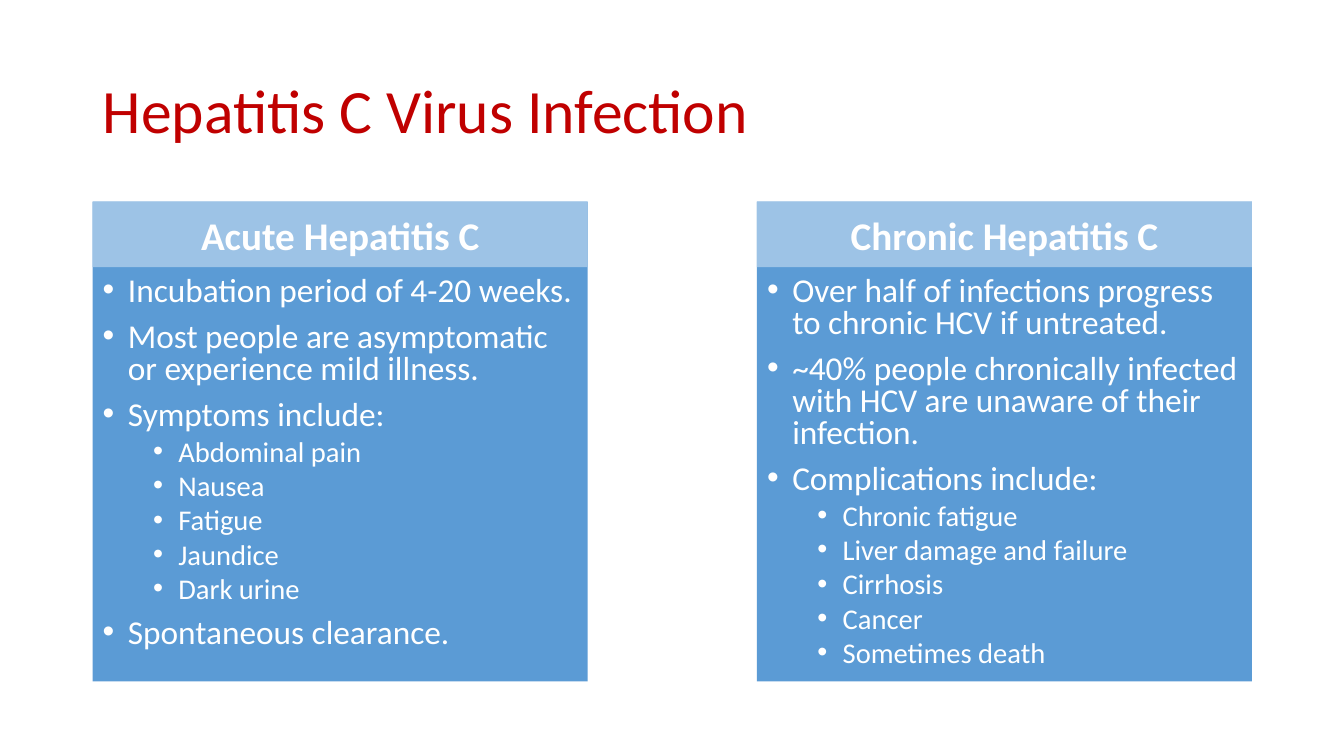
from dataclasses import dataclass

from lxml import etree
from pptx import Presentation
from pptx.dml.color import RGBColor
from pptx.enum.shapes import MSO_SHAPE
from pptx.enum.text import MSO_ANCHOR, MSO_AUTO_SIZE, PP_ALIGN
from pptx.oxml.ns import qn
from pptx.shapes.autoshape import Shape
from pptx.slide import Slide
from pptx.text.text import Font
from pptx.util import Pt

RECTANGLE = MSO_SHAPE.RECTANGLE
MIDDLE, TOP = MSO_ANCHOR.MIDDLE, MSO_ANCHOR.TOP
LEFT, CENTER = PP_ALIGN.LEFT, PP_ALIGN.CENTER
NO_AUTOFIT = MSO_AUTO_SIZE.NONE

RED, WHITE = "C00000", "FFFFFF"
BLUE, LIGHT_BLUE = "5B9BD5", "9DC3E6"

MARGIN = 66.2
PANEL_TOP, PANEL_WIDTH, PANEL_HEIGHT = 144, 353.5, 342.7
HEADING_HEIGHT = 46.8
LIST_TOP, LIST_HEIGHT = 194.4, 295.9
TWO_CONTENT_LAYOUT = 3


@dataclass
class Level:
    size: float
    margin: float
    space_before: float


@dataclass
class Point:
    text: str
    level: int = 0


@dataclass
class Stage:
    heading: str
    left: float
    placeholder: int
    points: list[Point]


LEVELS = [Level(23.8, 18, 10), Level(20.4, 54, 5)]

STAGES = [
    Stage("Acute Hepatitis C", MARGIN, 1, [
        Point("Incubation period of 4-20 weeks."),
        Point("Most people are asymptomatic or experience mild illness."),
        Point("Symptoms include:"),
        Point("Abdominal pain", 1),
        Point("Nausea", 1),
        Point("Fatigue", 1),
        Point("Jaundice", 1),
        Point("Dark urine", 1),
        Point("Spontaneous clearance."),
    ]),
    Stage("Chronic Hepatitis C", 540.7, 2, [
        Point("Over half of infections progress to chronic HCV if untreated."),
        Point("~40% people chronically infected with HCV are unaware of their infection."),
        Point("Complications include:"),
        Point("Chronic fatigue", 1),
        Point("Liver damage and failure", 1),
        Point("Cirrhosis", 1),
        Point("Cancer", 1),
        Point("Sometimes death", 1),
    ]),
]


def rgb(code: str) -> RGBColor:
    return RGBColor.from_string(code)


def style_font(font: Font, size: float, color: str, bold: bool = False) -> None:
    font.name = "Calibri"
    font.size = Pt(size)
    font.bold = bold
    font.color.rgb = rgb(color)


def place(shape: Shape, left: float, top: float, width: float, height: float) -> None:
    shape.left, shape.top = Pt(left), Pt(top)
    shape.width, shape.height = Pt(width), Pt(height)


def add_panel(slide: Slide, left: float, height: float, color: str) -> Shape:
    panel = slide.shapes.add_shape(
        RECTANGLE, Pt(left), Pt(PANEL_TOP), Pt(PANEL_WIDTH), Pt(height))
    panel.shadow.inherit = False
    panel.fill.solid()
    panel.fill.fore_color.rgb = rgb(color)
    panel.line.fill.background()
    return panel


def add_title(slide: Slide) -> None:
    title = slide.shapes.title
    place(title, MARGIN, 28.8, 828, 104.4)
    frame = title.text_frame
    frame.text = "Hepatitis C Virus Infection"
    frame.auto_size = NO_AUTOFIT
    frame.vertical_anchor = MIDDLE
    line = frame.paragraphs[0]
    line.alignment = LEFT
    line.line_spacing = 0.9
    style_font(line.font, 44, RED)


def add_heading(slide: Slide, stage: Stage) -> None:
    frame = add_panel(slide, stage.left, HEADING_HEIGHT, LIGHT_BLUE).text_frame
    frame.text = stage.heading
    frame.vertical_anchor = MIDDLE
    frame.paragraphs[0].alignment = CENTER
    style_font(frame.paragraphs[0].font, 28, WHITE, bold=True)


def fill_points(slide: Slide, stage: Stage) -> None:
    """Fill the stage's placeholder and bring it in front of its panel."""
    body = slide.placeholders[stage.placeholder]
    slide.shapes.element.append(body.element)
    place(body, stage.left, LIST_TOP, PANEL_WIDTH, LIST_HEIGHT)
    frame = body.text_frame
    frame.text = "\n".join(point.text for point in stage.points)
    frame.auto_size = NO_AUTOFIT
    frame.vertical_anchor = TOP
    for paragraph, point in zip(frame.paragraphs, stage.points):
        level = LEVELS[point.level]
        paragraph.level = point.level
        properties = paragraph._p.get_or_add_pPr()
        properties.set("marL", str(Pt(level.margin)))
        properties.set("indent", str(Pt(-18)))
        etree.SubElement(properties, qn("a:buFont"), typeface="Arial")
        etree.SubElement(properties, qn("a:buChar"), char="•")
        paragraph.line_spacing = 0.8
        paragraph.space_before = Pt(level.space_before)
        style_font(paragraph.font, level.size, WHITE)


def main() -> None:
    presentation = Presentation()
    presentation.slide_width, presentation.slide_height = Pt(960), Pt(540)
    slide = presentation.slides.add_slide(
        presentation.slide_layouts[TWO_CONTENT_LAYOUT])
    add_title(slide)
    for stage in STAGES:
        add_panel(slide, stage.left, PANEL_HEIGHT, BLUE)
        add_heading(slide, stage)
        fill_points(slide, stage)
    presentation.save("out.pptx")


if __name__ == "__main__":
    main()
